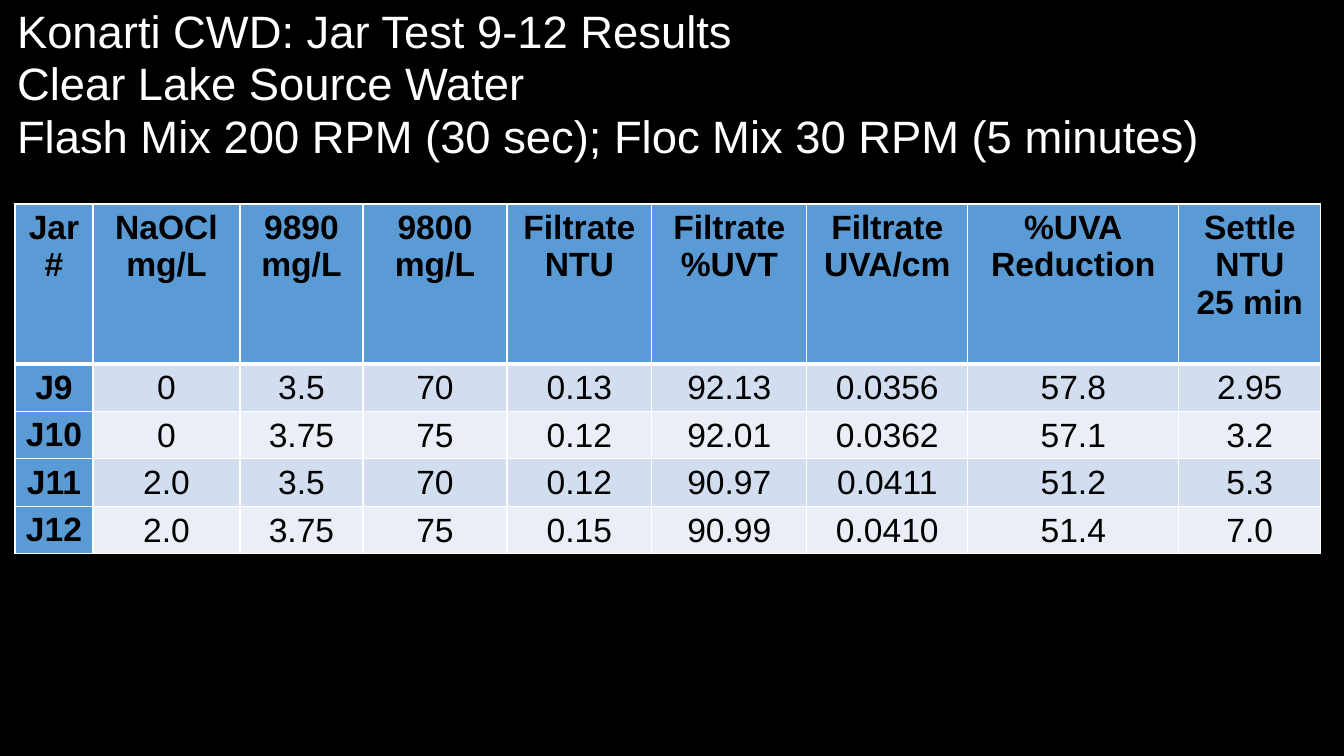
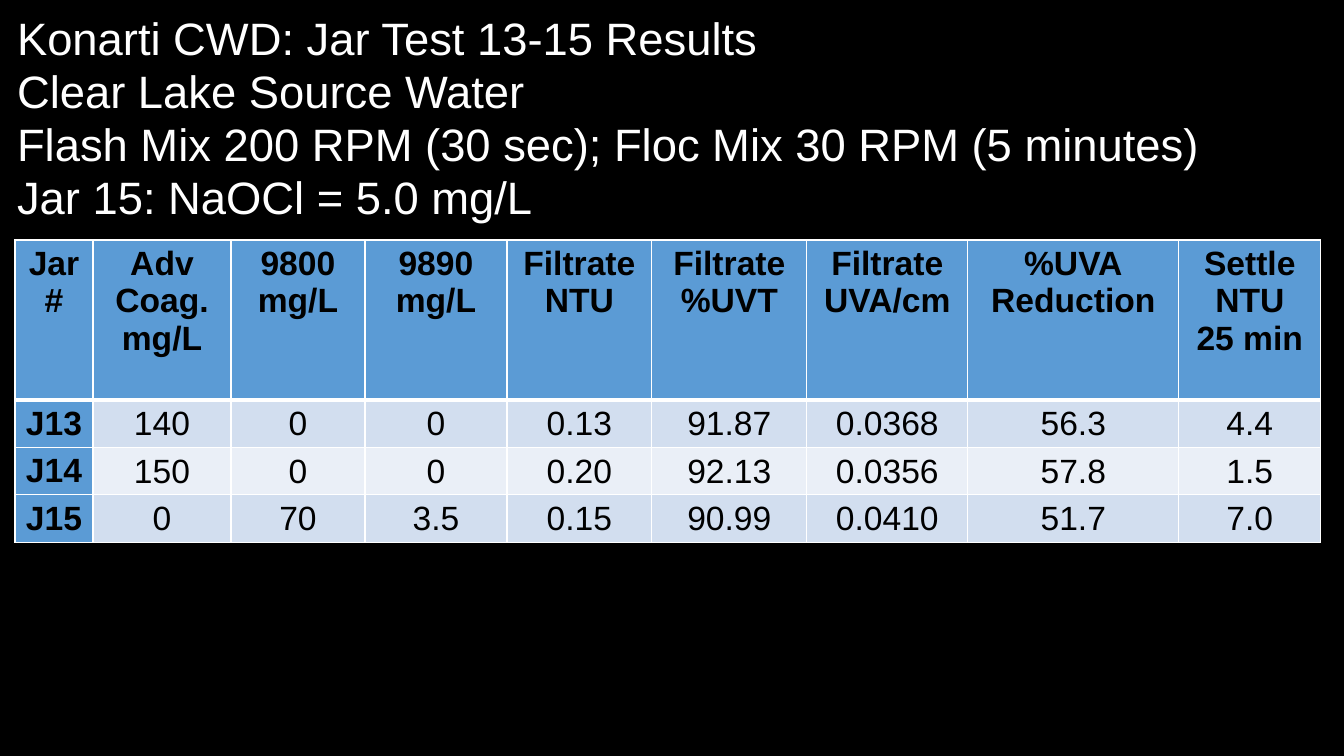
from dataclasses import dataclass

from lxml import etree
from pptx import Presentation
from pptx.dml.color import RGBColor
from pptx.enum.text import MSO_ANCHOR, MSO_AUTO_SIZE, PP_ALIGN
from pptx.oxml.ns import qn
from pptx.util import Emu, Pt

CENTER, LEFT = PP_ALIGN.CENTER, PP_ALIGN.LEFT
TOP, MIDDLE = MSO_ANCHOR.TOP, MSO_ANCHOR.MIDDLE
NO_AUTOFIT = MSO_AUTO_SIZE.NONE
TITLE_ONLY = 5
SLIDE_WIDTH, SLIDE_HEIGHT = 1344, 756
EMU_PER_PX = 12192000 / SLIDE_WIDTH


@dataclass(frozen=True)
class Theme:
    font: str = "Arial"
    background: str = "000000"
    title_color: str = "FFFFFF"
    cell_color: str = "000000"
    header: str = "5B9BD5"
    bands: tuple = ("D2DEEF", "EAEFF7")
    border: str = "FFFFFF"
    title_size: float = 32.4
    cell_size: int = 24
    title_spacing: float = 0.97
    thin: int = 1
    thick: int = 3


THEME = Theme()

TABLE_LEFT = 15
HEADER_HEIGHT, ROW_HEIGHT = 160, 47
HEADER_INSETS, VALUE_INSETS = (10, 5, 10, 5), (1, 1, 1, 0)
RESULT_WIDTHS = [145, 155, 161, 211, 142]
RESULT_HEADERS = [
    "Filtrate\nNTU", "Filtrate\n%UVT", "Filtrate\nUVA/cm",
    "%UVA\nReduction", "Settle\nNTU\n25 min",
]
TEST_CONDITIONS = [
    "Clear Lake Source Water",
    "Flash Mix 200 RPM (30 sec); Floc Mix 30 RPM (5 minutes)",
]

JAR_TESTS = [
    {
        "title": ["Konarti CWD: Jar Test 9-12 Results", *TEST_CONDITIONS],
        "title_height": 146,
        "table_top": 204,
        "dose_widths": [147, 123, 144],
        "dose_headers": ["NaOCl\nmg/L", "9890\nmg/L", "9800\nmg/L"],
        "jars": [
            ["J9", "0", "3.5", "70", "0.13", "92.13", "0.0356", "57.8", "2.95"],
            ["J10", "0", "3.75", "75", "0.12", "92.01", "0.0362", "57.1", "3.2"],
            ["J11", "2.0", "3.5", "70", "0.12", "90.97", "0.0411", "51.2", "5.3"],
            ["J12", "2.0", "3.75", "75", "0.15", "90.99", "0.0410", "51.4", "7.0"],
        ],
    },
    {
        "title": ["Konarti CWD: Jar Test 13-15 Results", *TEST_CONDITIONS,
                  "Jar 15: NaOCl = 5.0 mg/L"],
        "title_height": 214,
        "table_top": 240,
        "dose_widths": [138, 134, 142],
        "dose_headers": ["Adv\nCoag.\nmg/L", "9800\nmg/L", "9890\nmg/L"],
        "jars": [
            ["J13", "140", "0", "0", "0.13", "91.87", "0.0368", "56.3", "4.4"],
            ["J14", "150", "0", "0", "0.20", "92.13", "0.0356", "57.8", "1.5"],
            ["J15", "0", "70", "3.5", "0.15", "90.99", "0.0410", "51.7", "7.0"],
        ],
    },
]


def px(length):
    return Emu(round(length * EMU_PER_PX))


def add_run(paragraph, text, size, color, bold=False):
    run = paragraph.add_run()
    run.text = text
    run.font.name = THEME.font
    run.font.size = Pt(size)
    run.font.bold = bold
    run.font.color.rgb = RGBColor.from_string(color)


def add_title(slide, lines, height):
    title = slide.shapes.title
    title.left, title.top, title.width, title.height = map(px, (7, 12, 1313, height))
    frame = title.text_frame
    frame.word_wrap = True
    frame.auto_size = NO_AUTOFIT
    frame.vertical_anchor = MIDDLE
    paragraph = frame.paragraphs[0]
    paragraph.alignment = LEFT
    paragraph.line_spacing = THEME.title_spacing
    for index, line in enumerate(lines):
        if index:
            paragraph.add_line_break()
        add_run(paragraph, line, THEME.title_size, THEME.title_color)


def set_borders(cell, top, bottom):
    properties = cell._tc.get_or_add_tcPr()
    widths = {"lnL": THEME.thin, "lnR": THEME.thin, "lnT": top, "lnB": bottom}
    for position, (edge, width) in enumerate(widths.items()):
        line = etree.Element(qn(f"a:{edge}"), w=str(Pt(width)))
        fill = etree.SubElement(line, qn("a:solidFill"))
        etree.SubElement(fill, qn("a:srgbClr"), val=THEME.border)
        properties.insert(position, line)


def fill_cell(cell, text, row, column):
    is_header = row == 0 or column == 0
    color = THEME.header if is_header else THEME.bands[(row - 1) % 2]
    cell.fill.solid()
    cell.fill.fore_color.rgb = RGBColor.from_string(color)
    cell.vertical_anchor = TOP if is_header else MIDDLE
    insets = HEADER_INSETS if is_header else VALUE_INSETS
    cell.margin_left, cell.margin_top, cell.margin_right, cell.margin_bottom = map(px, insets)
    for index, line in enumerate(text.split("\n")):
        frame = cell.text_frame
        paragraph = frame.add_paragraph() if index else frame.paragraphs[0]
        paragraph.alignment = CENTER
        add_run(paragraph, line, THEME.cell_size, THEME.cell_color, is_header)
    set_borders(
        cell,
        top=THEME.thick if row == 1 else THEME.thin,
        bottom=THEME.thick if row == 0 else THEME.thin,
    )


def add_results_table(slide, test):
    rows = [["Jar\n#", *test["dose_headers"], *RESULT_HEADERS], *test["jars"]]
    widths = [78, *test["dose_widths"], *RESULT_WIDTHS]
    heights = [HEADER_HEIGHT] + [ROW_HEIGHT] * len(test["jars"])
    bounds = map(px, (TABLE_LEFT, test["table_top"], sum(widths), sum(heights)))
    table = slide.shapes.add_table(len(rows), len(widths), *bounds).table
    table.first_col = True
    for column, width in zip(table.columns, widths):
        column.width = px(width)
    for row, height in zip(table.rows, heights):
        row.height = px(height)
    for row, texts in enumerate(rows):
        for column, text in enumerate(texts):
            fill_cell(table.cell(row, column), text, row, column)


def main():
    prs = Presentation()
    prs.slide_width, prs.slide_height = px(SLIDE_WIDTH), px(SLIDE_HEIGHT)
    backdrop = prs.slide_master.background.fill
    backdrop.solid()
    backdrop.fore_color.rgb = RGBColor.from_string(THEME.background)
    for test in JAR_TESTS:
        slide = prs.slides.add_slide(prs.slide_layouts[TITLE_ONLY])
        add_title(slide, test["title"], test["title_height"])
        add_results_table(slide, test)
    prs.save("out.pptx")


if __name__ == "__main__":
    main()
